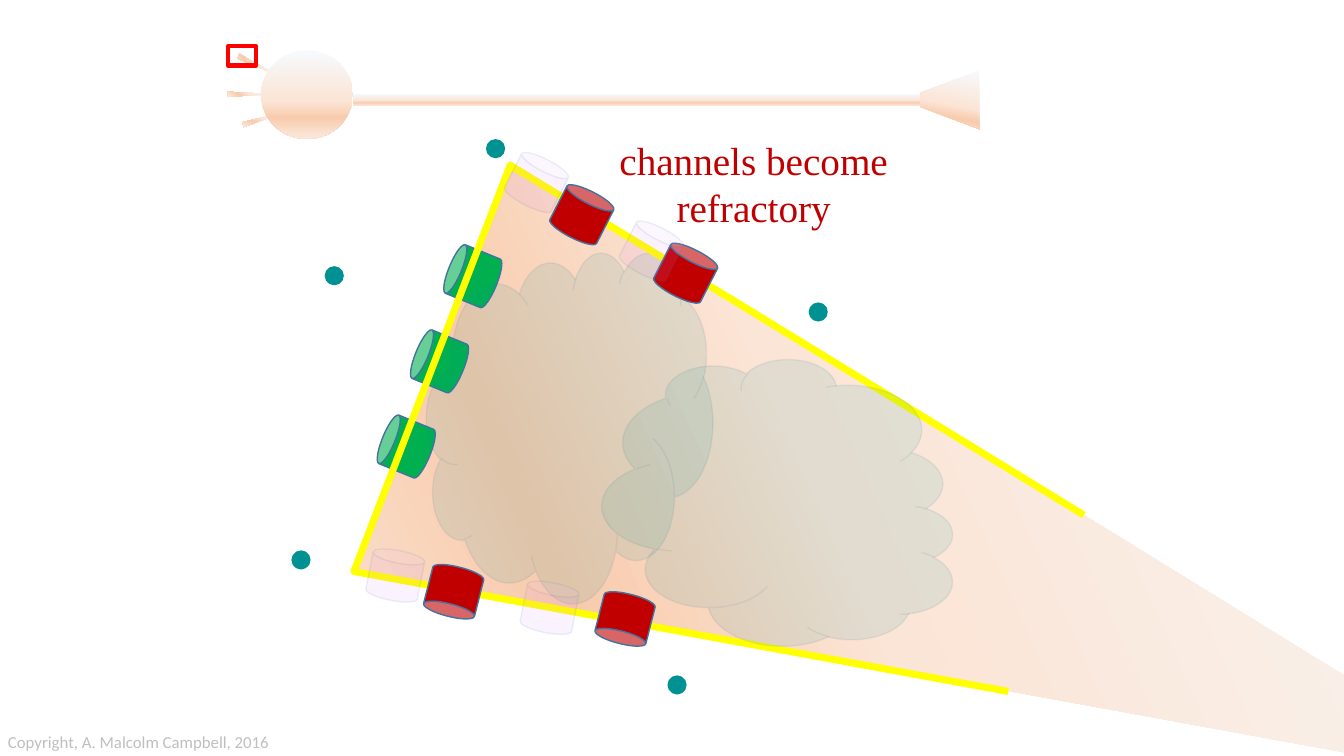
from collections import namedtuple
from dataclasses import dataclass

from lxml import etree
from pptx import Presentation
from pptx.dml.color import RGBColor
from pptx.enum.shapes import MSO_CONNECTOR, MSO_SHAPE
from pptx.enum.text import MSO_AUTO_SIZE, PP_ALIGN
from pptx.oxml.ns import qn
from pptx.util import Inches, Pt

TRIANGLE, TRAPEZOID = MSO_SHAPE.ISOSCELES_TRIANGLE, MSO_SHAPE.TRAPEZOID
OVAL, RECT = MSO_SHAPE.OVAL, MSO_SHAPE.RECTANGLE
CAN, CLOUD = MSO_SHAPE.CAN, MSO_SHAPE.CLOUD
STRAIGHT = MSO_CONNECTOR.STRAIGHT
FIT_SHAPE = MSO_AUTO_SIZE.SHAPE_TO_FIT_TEXT
LEFT, CENTER = PP_ALIGN.LEFT, PP_ALIGN.CENTER

COLS, ROWS = 13.33, 7.5  # grid of one-inch columns and rows
Box = namedtuple("Box", "x y w h")


@dataclass(frozen=True)
class Theme:
    cytoplasm: tuple = ((0, "F7FAFD"), (57, "FBE5D6"), (76, "F8CBAD"), (96, "FBE5D6"))
    teal: str = "009193"
    open: str = "00B050"
    refractory: str = "C00000"
    ghost: str = "D883FF"
    outline: str = "43739E"
    membrane: str = "FFFF00"
    marker: str = "FF0000"
    credit: str = "BFBFBF"
    faint: int = 10
    label_font: str = "Times New Roman"
    label_size: int = 28
    credit_font: str = "Calibri"
    credit_size: int = 12
    thin: int = 1
    frame: int = 3
    thick: int = 5


THEME = Theme()


def rgb(color):
    return RGBColor.from_string(color)


def inside(box, x, y, w=0, h=0):
    """Move a rectangle from the box's grid to the slide's."""
    return Box(box.x + x, box.y + y, w, h)


def set_line(s, color, width):
    s.line.color.rgb = rgb(color)
    s.line.width = Pt(width)


def add_shape(s, kind, at, rot=0, fill=None, line=None, width=THEME.thin, alpha=None):
    sp = s.shapes.add_shape(kind, *map(Inches, at))
    sp.shadow.inherit = False
    sp.rotation = rot
    if fill:
        sp.fill.solid()
        sp.fill.fore_color.rgb = rgb(fill)
    else:
        sp.fill.background()
    if line:
        set_line(sp, line, width)
    else:
        sp.line.fill.background()
    if alpha:
        for clr in sp._element.spPr.iter(qn("a:srgbClr")):
            etree.SubElement(clr, qn("a:alpha"), val=str(alpha * 1000))
    return sp


def add_cytoplasm(s, kind, at, rot=0, angle=90):
    """Add a part of the cell with the four-stop gradient, angle clockwise."""
    sp = add_shape(s, kind, at, rot)
    sp.fill.gradient()
    sp.fill.gradient_angle = 360 - angle
    stops = next(sp._element.spPr.iter(qn("a:gsLst")))
    for gs in list(stops):
        stops.remove(gs)
    for pos, color in THEME.cytoplasm:
        gs = etree.SubElement(stops, qn("a:gs"), pos=str(pos * 1000))
        etree.SubElement(gs, qn("a:srgbClr"), val=color)
    return sp


def add_text(s, at, lines, font, size, color, align, wrap):
    tf = s.shapes.add_textbox(*map(Inches, at)).text_frame
    tf.word_wrap = wrap
    tf.auto_size = FIT_SHAPE
    tf.text = "\n".join(lines)
    for p in tf.paragraphs:
        p.alignment = align
        p.font.name, p.font.size = font, Pt(size)
        p.font.color.rgb = rgb(color)


def add_channels(s, box, places, rot, fill, alpha=None):
    for x, y in places:
        add_shape(s, CAN, inside(box, x, y, 0.52, 0.5), rot, fill,
                  THEME.outline, alpha=alpha)


def add_cloud(s, box, x, y, rot=0):
    add_shape(s, CLOUD, inside(box, x, y, 2.84, 3.48), rot, THEME.teal,
              THEME.outline, alpha=THEME.faint)


def add_membrane(s, points):
    pts = [(Inches(x), Inches(y)) for x, y in points]
    builder = s.shapes.build_freeform(*pts[0])
    builder.add_line_segments(pts[1:], close=False)
    sp = builder.convert_to_shape()
    sp.shadow.inherit = False
    sp.fill.background()
    set_line(sp, THEME.membrane, THEME.thick)


def add_membrane_extension(s, start, end):
    c = s.shapes.add_connector(STRAIGHT, *map(Inches, (*start, *end)))
    set_line(c, THEME.membrane, THEME.thick)
    etree.SubElement(c._element.spPr, qn("a:effectLst"))


def draw_neuron(s, box):
    for x, y, rot in ((0.3, 0, 116), (0.22, 0.27, 90), (0.36, 0.5, 73)):
        add_cytoplasm(s, TRIANGLE, inside(box, x, y, 0.05, 0.49), rot, 45)
    add_cytoplasm(s, OVAL, inside(box, 0.33, 0.08, 0.91, 0.88))
    add_cytoplasm(s, RECT, inside(box, 1.24, 0.51, 5.64, 0.12))
    terminal = add_cytoplasm(s, TRAPEZOID, inside(box, 6.87, 0.28, 0.58, 0.58), 270, 190)
    terminal.adjustments[0] = 0.377
    add_shape(s, RECT, inside(box, 0, 0.04, 0.28, 0.19),
              line=THEME.marker, width=THEME.frame)


def draw_dendrite_interior(s, box):
    add_cytoplasm(s, TRIANGLE, inside(box, 4.62, -1.38, 4.35, 11.58), 111, 45)


def draw_dendrite(s, box):
    """Draw the enlarged dendrite tip: ions, channels, membrane and label."""
    for x, y in ((0.33, 1.34), (1.93, 0.08), (0, 4.16), (3.73, 5.4), (5.13, 1.7)):
        add_shape(s, OVAL, inside(box, x, y, 0.19, 0.19), fill=THEME.teal)
    open_places = [(0.88 + 0.33 * i, 2.88 - 0.845 * i) for i in range(3)]
    add_channels(s, box, open_places, 292.3, THEME.open)
    add_cloud(s, box, 1.34, 1.2)

    corners = [inside(box, x, y)[:2] for x, y in
               ((4.4, 1.69), (2.17, 0.34), (0.62, 4.37), (3.78, 4.95))]
    add_membrane(s, corners)
    add_channels(s, box, ((2.62, 0.58), (3.65, 1.16)), 27, THEME.refractory)
    add_channels(s, box, ((3.05, 4.59), (1.35, 4.32)), 194.2, THEME.refractory)
    add_membrane_extension(s, corners[-1], inside(box, 7.11, 5.56)[:2])
    add_membrane_extension(s, corners[0], inside(box, 7.86, 3.81)[:2])
    add_cloud(s, box, 3.41, 1.95, 90)

    add_text(s, inside(box, 2.88, 0, 3.41, 1.04), ("channels become", "refractory"),
             THEME.label_font, THEME.label_size, THEME.refractory, CENTER, True)
    add_channels(s, box, ((2.17, 0.26), (3.31, 0.94)), 27, THEME.ghost, THEME.faint)
    add_channels(s, box, ((0.77, 4.16), (2.3, 4.48)), 11.2, THEME.ghost, THEME.faint)


def draw_credit(s, box):
    add_text(s, box, ("Copyright, A. Malcolm Campbell, 2016",), THEME.credit_font,
             THEME.credit_size, THEME.credit, LEFT, False)


def main():
    prs = Presentation()
    prs.slide_width, prs.slide_height = Inches(COLS), Inches(ROWS)
    s = prs.slides.add_slide(prs.slide_layouts[6])
    dendrite = Box(2.89, 1.3, 7.86, 5.59)
    draw_dendrite_interior(s, dendrite)
    draw_neuron(s, Box(2.26, 0.42, 7.45, 0.99))
    draw_dendrite(s, dendrite)
    draw_credit(s, Box(-0.02, ROWS - 0.29, 2.82, 0.3))
    prs.save("out.pptx")


if __name__ == "__main__":
    main()
